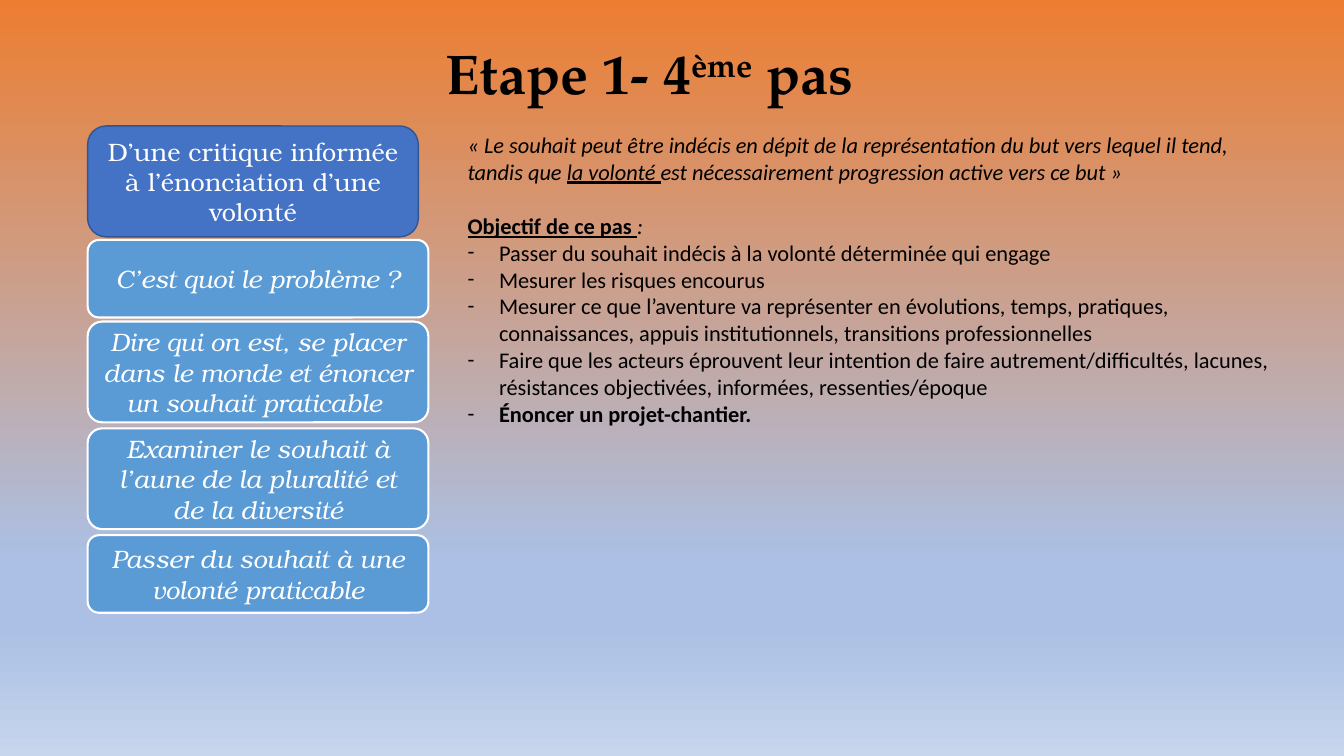
from dataclasses import dataclass

from lxml.etree import SubElement
from pptx import Presentation
from pptx.dml.color import RGBColor
from pptx.enum.shapes import MSO_SHAPE
from pptx.enum.text import MSO_ANCHOR, PP_ALIGN
from pptx.oxml.ns import qn
from pptx.slide import Slide
from pptx.text.text import TextFrame, _Paragraph
from pptx.util import Pt

TITLE_FONT = "TeX Gyre Pagella"
STEP_FONT = "TeX Gyre Bonum"
BODY_FONT = "Calibri"
BODY_SIZE = 16
BODY_LINE = 19.5
BULLET_INDENT = 22.5
STEP_LEFT = 62.6
BACKGROUND_STOPS = [(0, "ED7D31"), (3, "EA8038"), (74, "ABC0E4"), (83, "ABC0E4"), (100, "C7D5ED")]


@dataclass
class TextRun:
    text: str
    bold: bool = False
    italic: bool = False
    underline: bool = False
    superscript: bool = False


@dataclass
class Step:
    text: str
    top: float
    height: float
    width: float = 243.4
    corner: float = 0.145
    fill: str = "5B9BD5"
    line: str = "FFFFFF"
    line_width: float = 1.5
    italic: bool = True


@dataclass
class BodyParagraph:
    runs: list[TextRun]
    bullet: bool = False
    space_before: float = 0


STEPS = [
    Step("D’une critique informée à l’énonciation d’une volonté", 90, 79.2, width=236.2,
         corner=0.16667, fill="4472C4", line="325491", line_width=1, italic=False),
    Step("C’est quoi le problème ?", 171.4, 55.4),
    Step("Dire qui on est, se placer dans le monde et énoncer un souhait praticable ", 229.7, 72),
    Step("Examiner le souhait à l’aune de la pluralité et de la diversité", 306, 72),
    Step("Passer du souhait à une volonté praticable", 382.3, 55.4),
]

TITLE = [
    TextRun("Etape 1- 4", bold=True),
    TextRun("ème", bold=True, superscript=True),
    TextRun(" pas", bold=True),
]

BODY = [
    BodyParagraph([
        TextRun("« Le souhait peut être indécis en dépit de la représentation du but "
                "vers lequel il tend, tandis que ", italic=True),
        TextRun("la volonté ", italic=True, underline=True),
        TextRun("est nécessairement progression active vers ce but »", italic=True),
    ]),
    BodyParagraph([
        TextRun("Objectif de ce pas ", bold=True, underline=True),
        TextRun(":", italic=True),
    ], space_before=BODY_LINE),
    BodyParagraph([TextRun("Passer du souhait indécis à la volonté déterminée qui engage")], bullet=True),
    BodyParagraph([TextRun("Mesurer les risques encourus")], bullet=True),
    BodyParagraph([TextRun("Mesurer ce que l’aventure va représenter en évolutions, temps, pratiques, "
                           "connaissances, appuis institutionnels, transitions professionnelles")], bullet=True),
    BodyParagraph([TextRun("Faire que les acteurs éprouvent leur intention de faire autrement/difficultés, "
                           "lacunes, résistances objectivées, informées, ressenties/époque")], bullet=True),
    BodyParagraph([TextRun("Énoncer un projet-chantier.", bold=True)], bullet=True),
]


def color(value: str) -> RGBColor:
    return RGBColor.from_string(value)


def add_runs(paragraph: _Paragraph, runs: list[TextRun], font_name: str, size: float, font_color: str) -> None:
    for item in runs:
        run = paragraph.add_run()
        run.text = item.text
        font = run.font
        font.name = font_name
        font.size = Pt(size)
        font.bold = item.bold
        font.italic = item.italic
        font.underline = item.underline
        font.color.rgb = color(font_color)
        if item.superscript:
            run._r.get_or_add_rPr().set("baseline", "30000")


def add_dash_bullet(paragraph: _Paragraph) -> None:
    properties = paragraph._p.get_or_add_pPr()
    properties.set("marL", str(Pt(BULLET_INDENT)))
    properties.set("indent", str(-Pt(BULLET_INDENT)))
    SubElement(properties, qn("a:buFont"), typeface=BODY_FONT)
    SubElement(properties, qn("a:buChar"), char="-")


def paint_background(slide: Slide) -> None:
    fill = slide.background.fill
    fill.gradient()
    fill.gradient_angle = 270
    stop_list = slide.element.find(".//" + qn("a:gsLst"))
    for stop in list(stop_list):
        stop_list.remove(stop)
    for percent, value in BACKGROUND_STOPS:
        stop = SubElement(stop_list, qn("a:gs"), pos=str(percent * 1000))
        SubElement(stop, qn("a:srgbClr"), val=value)


def add_text_frame(slide: Slide, left: float, top: float, width: float, height: float) -> TextFrame:
    text_frame = slide.shapes.add_textbox(Pt(left), Pt(top), Pt(width), Pt(height)).text_frame
    text_frame.word_wrap = True
    return text_frame


def add_title(slide: Slide) -> None:
    paragraph = add_text_frame(slide, 23, 23.8, 882, 55.4).paragraphs[0]
    paragraph.alignment = PP_ALIGN.CENTER
    add_runs(paragraph, TITLE, TITLE_FONT, 40, "000000")


def add_step(slide: Slide, step: Step) -> None:
    shape = slide.shapes.add_shape(MSO_SHAPE.ROUNDED_RECTANGLE, Pt(STEP_LEFT), Pt(step.top),
                                   Pt(step.width), Pt(step.height))
    shape.adjustments[0] = step.corner
    shape.shadow.inherit = False
    shape.fill.solid()
    shape.fill.fore_color.rgb = color(step.fill)
    shape.line.color.rgb = color(step.line)
    shape.line.width = Pt(step.line_width)
    text_frame = shape.text_frame
    text_frame.word_wrap = True
    text_frame.vertical_anchor = MSO_ANCHOR.MIDDLE
    paragraph = text_frame.paragraphs[0]
    paragraph.alignment = PP_ALIGN.CENTER
    add_runs(paragraph, [TextRun(step.text, italic=step.italic)], STEP_FONT, 18, "FFFFFF")


def add_body(slide: Slide) -> None:
    text_frame = add_text_frame(slide, 326.9, 90, 599, 317.5)
    for index, item in enumerate(BODY):
        paragraph = text_frame.add_paragraph() if index else text_frame.paragraphs[0]
        if item.bullet:
            add_dash_bullet(paragraph)
        if item.space_before:
            paragraph.space_before = Pt(item.space_before)
        add_runs(paragraph, item.runs, BODY_FONT, BODY_SIZE, "000000")


def main() -> None:
    presentation = Presentation()
    presentation.slide_width = Pt(960)
    presentation.slide_height = Pt(540)
    slide = presentation.slides.add_slide(presentation.slide_layouts[6])
    paint_background(slide)
    add_title(slide)
    for step in STEPS:
        add_step(slide, step)
    add_body(slide)
    presentation.save("out.pptx")


if __name__ == "__main__":
    main()
